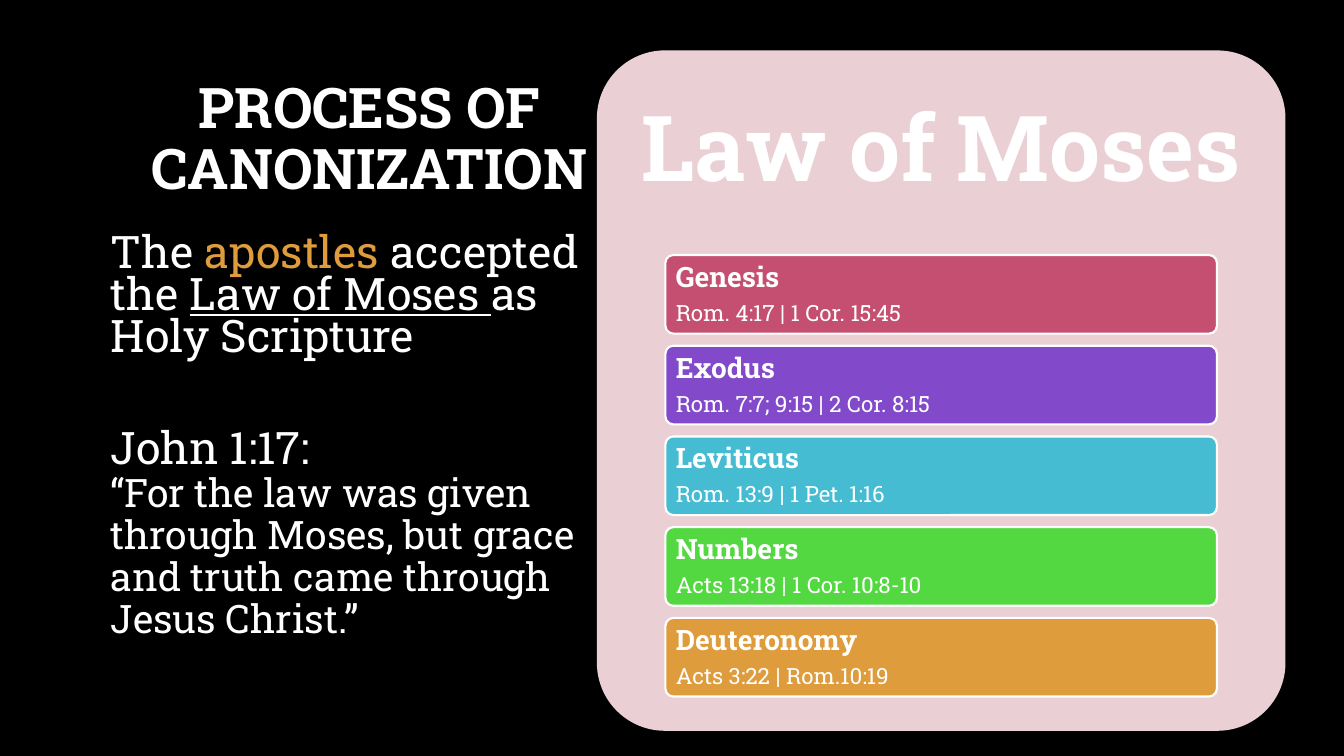
"""Build the slide on the canonization of the Law of Moses."""
from pptx import Presentation
from pptx import util as u
from pptx.dml.color import RGBColor
from pptx.enum import shapes, text

FONT = "Roboto Slab"
COLORS = {
    "black": "000000", "white": "FFFFFF", "panel": "EAD0D5", "rose": "C54F71",
    "violet": "824ACB", "teal": "45BCD2", "green": "54D841", "amber": "DE9C3C",
}
BOOKS = [
    ("Genesis", "Rom. 4:17 | 1 Cor. 15:45", "rose"),
    ("Exodus", "Rom. 7:7; 9:15 | 2 Cor. 8:15", "violet"),
    ("Leviticus", "Rom. 13:9 | 1 Pet. 1:16", "teal"),
    ("Numbers", "Acts 13:18 | 1 Cor. 10:8-10", "green"),
    ("Deuteronomy", "Acts 3:22 | Rom.10:19", "amber"),
]


def add_box(left, top, width, height, margins, fill=None):
    """Add a text box, or a filled rounded rectangle when a fill is named."""
    place = [u.Inches(length) for length in (left, top, width, height)]
    if fill:
        box = page.shapes.add_shape(shapes.MSO_SHAPE.ROUNDED_RECTANGLE, *place)
        box.adjustments[0] = 0.1
        box.shadow.inherit = False
        box.fill.solid()
        box.fill.fore_color.rgb = RGBColor.from_string(COLORS[fill])
        box.line.fill.background()
    else:
        box = page.shapes.add_textbox(*place)
    frame = box.text_frame
    frame.word_wrap = True
    frame.margin_left = frame.margin_right = u.Inches(margins[0])
    frame.margin_top = frame.margin_bottom = u.Inches(margins[1])
    return box


def add_span(para, words, size, color="white", bold=False, underline=False):
    """Add one formatted run to a paragraph."""
    span = para.add_run()
    span.text = words
    span.font.name = FONT
    span.font.size = u.Pt(size)
    span.font.bold = bold
    span.font.underline = underline
    span.font.color.rgb = RGBColor.from_string(COLORS[color])


deck = Presentation()
deck.slide_width = u.Inches(13.33)
deck.slide_height = u.Inches(7.5)
page = deck.slides.add_slide(deck.slide_layouts[6])
page.background.fill.solid()
page.background.fill.fore_color.rgb = RGBColor.from_string(COLORS["black"])

add_box(5.92, 0.5, 6.83, 6.75, (0.1, 0.05), "panel")
headings = [
    ("PROCESS OF CANONIZATION", 40, (1, 0.67, 5.33, 1.45), (0.1, 0.05)),
    ("Law of Moses", 65, (5.92, 0.5, 6.83, 2.02), (0.27, 0.27)),
]
for words, size, place, margins in headings:
    frame = add_box(*place, margins).text_frame
    frame.vertical_anchor = text.MSO_ANCHOR.MIDDLE
    para = frame.paragraphs[0]
    para.alignment = text.PP_ALIGN.CENTER
    para.line_spacing = 0.9
    add_span(para, words, size, bold=True)

body = add_box(1, 2.29, 4.92, 4.04, (0.1, 0.05)).text_frame
statement, verse = body.paragraphs[0], body.add_paragraph()
for para, space in ((statement, 10), (verse, 50)):
    para.line_spacing = u.Pt(30)
    para.space_before = u.Pt(space)
add_span(statement, "The ", 32)
add_span(statement, "apostles", 32, "amber")
add_span(statement, " accepted the ", 32)
add_span(statement, "Law of Moses ", 32, underline=True)
add_span(statement, "as Holy Scripture", 32)
add_span(verse, "John 1:17:", 32)
verse.add_line_break()
add_span(verse, "“For the law was given through Moses, but grace and truth "
         "came through Jesus Christ.”", 28)

for index, (book, references, color) in enumerate(BOOKS):
    card = add_box(6.6, 2.53 + 0.9 * index, 5.47, 0.78, (0.08, 0.06), color)
    card.line.color.rgb = RGBColor.from_string(COLORS["white"])
    card.line.width = u.Pt(1.5)
    frame = card.text_frame
    frame.vertical_anchor = text.MSO_ANCHOR.TOP
    name, detail = frame.paragraphs[0], frame.add_paragraph()
    for para in (name, detail):
        para.alignment = text.PP_ALIGN.LEFT
        para.line_spacing = 0.9
    name.space_after = u.Pt(6)
    add_span(name, book, 20, bold=True)
    add_span(detail, references, 16)

deck.save("out.pptx")
